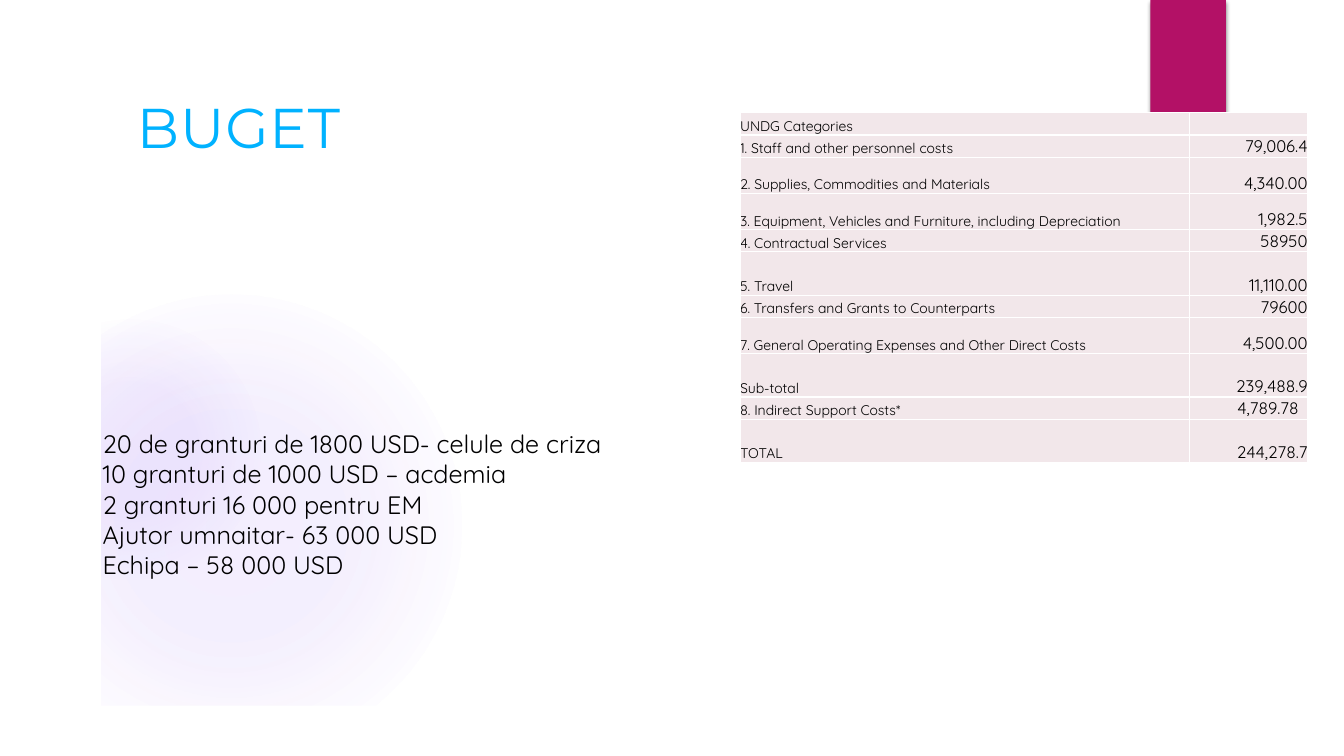
from lxml.etree import SubElement
from pptx import Presentation
from pptx.dml.color import RGBColor
from pptx.enum.shapes import MSO_SHAPE
from pptx.enum.text import MSO_ANCHOR, PP_ALIGN
from pptx.oxml import parse_xml
from pptx.oxml.ns import nsdecls, qn
from pptx.util import Inches, Pt

WIDTH, HEIGHT = 13.33, 7.5
MARGIN = 0.52
COLORS = {"white": "FFFFFF", "black": "000000", "glow": "9B6BF2",
          "tab": "B31166", "title": "00B2FF", "cell": "F2E7EA"}
TITLE_FONT, BODY_FONT = "Montserrat", "Quicksand"

BUDGET = [
    ("UNDG Categories", "", 0.22),
    ("1. Staff and other personnel costs", "79,006.4", 0.22),
    ("2. Supplies, Commodities and Materials", "4,340.00", 0.36),
    ("3. Equipment, Vehicles and Furniture, including Depreciation", "1,982.5", 0.36),
    ("4. Contractual Services", "58950", 0.22),
    ("5. Travel", "11,110.00", 0.43),
    ("6. Transfers and Grants to Counterparts", "79600", 0.22),
    ("7. General Operating Expenses and Other Direct Costs", "4,500.00", 0.36),
    ("Sub-total", "239,488.9", 0.43),
    ("8. Indirect Support Costs*", "4,789.78", 0.22),
    ("TOTAL", "244,278.7", 0.43),
]
INDENTED_AMOUNT = "4,789.78"
GRANTS = [
    "20 de granturi de 1800 USD- celule de criza",
    "10 granturi de 1000 USD – acdemia",
    "2 granturi 16 000 pentru EM",
    "Ajutor umnaitar- 63 000 USD",
    "Echipa – 58 000 USD",
]


def color(name):
    return RGBColor.from_string(COLORS[name])


def inches(box):
    return [Inches(value) for value in box]


def style_runs(paragraph, size, font, color_name):
    for run in paragraph.runs:
        run.font.size = Pt(size)
        run.font.name = font
        run.font.color.rgb = color(color_name)


def paint(shape, color_name):
    shape.fill.solid()
    shape.fill.fore_color.rgb = color(color_name)
    shape.line.fill.background()
    shape.shadow.inherit = False


def add_glow(slide, box, stops):
    """Circle that fades outwards; stops are (position, opacity) in percent."""
    shape = slide.shapes.add_shape(MSO_SHAPE.OVAL, *inches(box))
    paint(shape, "glow")
    stop_xml = "".join(
        f'<a:gs pos="{position * 1000}"><a:srgbClr val="{COLORS["glow"]}">'
        f'<a:alpha val="{opacity * 1000}"/></a:srgbClr></a:gs>'
        for position, opacity in stops)
    gradient = parse_xml(
        f'<a:gradFill {nsdecls("a")} rotWithShape="1"><a:gsLst>{stop_xml}</a:gsLst>'
        '<a:path path="circle"><a:fillToRect l="50000" t="50000" r="50000" b="50000"/>'
        '</a:path></a:gradFill>')
    properties = shape._element.spPr
    properties.replace(properties.find(qn("a:solidFill")), gradient)


def add_frame(slide, box, margin):
    """White border that trims the glow at the slide edges."""
    left, top, width, height = box
    right, bottom = left + width, top + height
    builder = slide.shapes.build_freeform(left, top, scale=Inches(1))
    builder.add_line_segments([(left, bottom), (right, bottom), (right, top)])
    builder.move_to(right - margin, bottom - margin)
    builder.add_line_segments([(left + margin, bottom - margin),
                               (left + margin, top + margin),
                               (right - margin, top + margin)])
    paint(builder.convert_to_shape(), "white")


def add_tab(slide, box):
    shape = slide.shapes.add_shape(MSO_SHAPE.RECTANGLE, *inches(box))
    paint(shape, "tab")
    effects = shape._element.spPr.find(qn("a:effectLst"))
    shadow = SubElement(effects, qn("a:outerShdw"), blurRad=str(Pt(3)),
                        dist=str(Pt(2)), dir="5400000", rotWithShape="0")
    shade = SubElement(shadow, qn("a:srgbClr"), val=COLORS["black"])
    SubElement(shade, qn("a:alpha"), val="45000")


def add_background(slide, box):
    left, top, width, height = box
    large, small = 4.58, 2.58
    add_glow(slide, (left, top + height - large, large, large),
             [(0, 11), (36, 10), (75, 0)])
    add_glow(slide, (left, top + 3.17, small, small), [(0, 8), (36, 8), (72, 0)])
    add_frame(slide, box, MARGIN)
    add_tab(slide, (left + 11.41, top, 0.75, height / 6))


def add_title(slide, box):
    text_frame = slide.shapes.add_textbox(*inches(box)).text_frame
    text_frame.word_wrap = True
    text_frame.vertical_anchor = MSO_ANCHOR.MIDDLE
    text_frame.text = "BUGET"
    paragraph = text_frame.paragraphs[0]
    paragraph.line_spacing = Pt(27.3)
    style_runs(paragraph, 40, TITLE_FONT, "title")
    paragraph.runs[0].font._element.set("spc", "70")


def add_grants(slide, box):
    text_frame = slide.shapes.add_textbox(*inches(box)).text_frame
    text_frame.word_wrap = True
    text_frame.text = "\n".join(GRANTS)
    for paragraph in text_frame.paragraphs:
        style_runs(paragraph, 18, BODY_FONT, "black")


def fill_cell(cell, text, size, alignment):
    cell.fill.solid()
    cell.fill.fore_color.rgb = color("cell")
    cell.vertical_anchor = MSO_ANCHOR.BOTTOM
    cell.margin_left = cell.margin_top = cell.margin_bottom = 0
    cell.margin_right = Inches(0.09 if text == INDENTED_AMOUNT else 0)
    cell.text = text
    paragraph = cell.text_frame.paragraphs[0]
    paragraph.alignment = alignment
    style_runs(paragraph, size, BODY_FONT, "black")
    if not text:
        SubElement(paragraph._p, qn("a:endParaRPr"), sz=str(size * 100))
    # White borders go before the fill in the cell properties
    properties = cell._tc.get_or_add_tcPr()
    for index, side in enumerate(("lnL", "lnR", "lnT", "lnB")):
        properties.insert(index, parse_xml(
            f'<a:{side} {nsdecls("a")} w="{Pt(1)}"><a:solidFill>'
            f'<a:srgbClr val="{COLORS["white"]}"/></a:solidFill></a:{side}>'))


def add_budget_table(slide, box):
    table = slide.shapes.add_table(len(BUDGET), 2, *inches(box)).table
    table.first_row = table.horz_banding = False
    amount_width = 1.17
    table.columns[0].width = Inches(box[2] - amount_width)
    table.columns[1].width = Inches(amount_width)
    for index, (category, amount, height) in enumerate(BUDGET):
        table.rows[index].height = Inches(height)
        fill_cell(table.cell(index, 0), category, 10, PP_ALIGN.LEFT)
        fill_cell(table.cell(index, 1), amount, 12, PP_ALIGN.RIGHT)


def main():
    presentation = Presentation()
    presentation.slide_width = Inches(WIDTH)
    presentation.slide_height = Inches(HEIGHT)
    slide = presentation.slides.add_slide(presentation.slide_layouts[6])
    add_background(slide, (0, 0, WIDTH, HEIGHT))
    add_title(slide, (1.26, 0.84, 4.95, 1.11))
    add_budget_table(slide, (7.34, 1.12, 5.63, 3.47))
    add_grants(slide, (0.92, 4.2, 5.43, 1.62))
    presentation.save("out.pptx")


if __name__ == "__main__":
    main()
